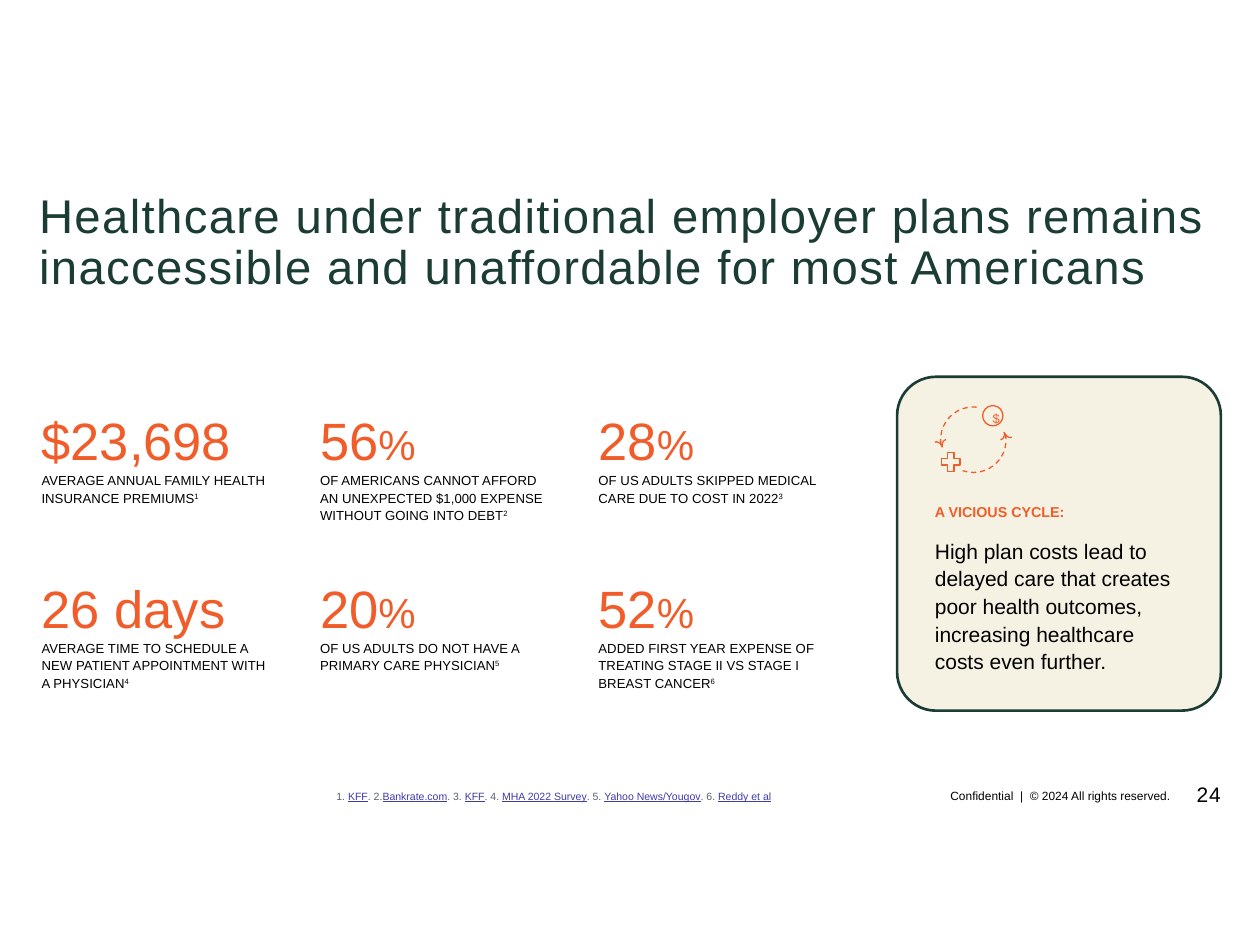
from dataclasses import dataclass, field
from typing import NamedTuple

from lxml.etree import SubElement
from pptx import Presentation
from pptx.dml.color import RGBColor
from pptx.enum.dml import MSO_LINE
from pptx.enum.shapes import MSO_SHAPE
from pptx.enum.text import MSO_ANCHOR, MSO_AUTO_SIZE, PP_ALIGN
from pptx.oxml.ns import qn
from pptx.util import Inches, Pt

GREEN = RGBColor(0x1A, 0x3C, 0x34)
ORANGE = RGBColor(0xF1, 0x5D, 0x2A)
CREAM = RGBColor(0xF5, 0xF2, 0xE3)
BLACK = RGBColor(0x00, 0x00, 0x00)
GRAY = RGBColor(0x59, 0x61, 0x6E)
LINK = RGBColor(0x40, 0x3C, 0xA8)


@dataclass
class Run:
    text: str
    size: float
    color: RGBColor
    font: dict = field(default_factory=dict)
    attributes: dict = field(default_factory=dict)


class Statistic(NamedTuple):
    number: str
    unit: str
    caption: str


class Barb(NamedTuple):
    start: tuple
    control_1: tuple
    control_2: tuple
    end: tuple


STATISTICS = [
    Statistic("$23,698", "", "AVERAGE ANNUAL FAMILY HEALTH INSURANCE PREMIUMS"),
    Statistic("56", "%", "OF AMERICANS CANNOT AFFORD AN UNEXPECTED $1,000 EXPENSE WITHOUT GOING INTO DEBT"),
    Statistic("28", "%", "OF US ADULTS SKIPPED MEDICAL CARE DUE TO COST IN 2022"),
    Statistic("26 days", "", "AVERAGE TIME TO SCHEDULE A NEW PATIENT APPOINTMENT WITH A PHYSICIAN"),
    Statistic("20", "%", "OF US ADULTS DO NOT HAVE A PRIMARY CARE PHYSICIAN"),
    Statistic("52", "%", "ADDED FIRST YEAR EXPENSE OF TREATING STAGE II VS STAGE I BREAST CANCER"),
]
# Label before each source, then the source itself
SOURCES = [
    ("1. ", "KFF"), (". 2.", "Bankrate.com"), (". 3. ", "KFF"),
    (". 4. ", "MHA 2022 Survey"), (". 5. ", "Yahoo News/Yougov"), (". 6. ", "Reddy et al"),
]
CYCLE_CENTER = (7.725, 3.49)
CYCLE_RADIUS = 0.26
BARBS = [
    Barb((8.03, 3.47), (8.01, 3.48), (7.98, 3.46), (7.97, 3.43)),
    Barb((7.94, 3.49), (7.96, 3.49), (7.98, 3.46), (7.97, 3.43)),
]


def place(shape, left: float, top: float, width: float, height: float) -> None:
    shape.left, shape.top = Inches(left), Inches(top)
    shape.width, shape.height = Inches(width), Inches(height)


def format_frame(frame, insets=(0, 0), **values) -> None:
    horizontal, vertical = map(Inches, insets)
    settings = {
        "word_wrap": True,
        "auto_size": MSO_AUTO_SIZE.SHAPE_TO_FIT_TEXT,
        "vertical_anchor": MSO_ANCHOR.TOP,
        "margin_left": horizontal, "margin_right": horizontal,
        "margin_top": vertical, "margin_bottom": vertical,
    } | values
    for name, value in settings.items():
        setattr(frame, name, value)


def write(paragraph, runs: list[Run], **values) -> None:
    for name, value in values.items():
        setattr(paragraph, name, value)
    for item in runs:
        run = paragraph.add_run()
        run.text = item.text
        settings = {"name": "Arial", "size": Pt(item.size)} | item.font
        for name, value in settings.items():
            setattr(run.font, name, value)
        run.font.color.rgb = item.color
        for name, value in item.attributes.items():
            run._r.get_or_add_rPr().set(name, value)


def add_text(slide, box: tuple, runs: list[Run], insets=(0, 0), frame_values=None, **values):
    frame = slide.shapes.add_textbox(*map(Inches, box)).text_frame
    format_frame(frame, insets, **(frame_values or {}))
    write(frame.paragraphs[0], runs, **values)
    return frame


def add_statistic(slide, left: float, top: float, number: int, statistic: Statistic) -> None:
    figure = [Run(statistic.number, 30, ORANGE)]
    if statistic.unit:
        figure.append(Run(statistic.unit, 24, ORANGE))
    frame = add_text(slide, (left, top, 1.8, 0.83), figure, line_spacing=1.1)
    write(frame.add_paragraph(), [
        Run(statistic.caption, 7.5, BLACK),
        Run(str(number), 7.5, BLACK, attributes={"baseline": "30000"}),
    ], line_spacing=1.1)


def outline(shape, color: RGBColor = ORANGE, width: float = 0.75, fill=None) -> None:
    shape.shadow.inherit = False
    if fill is None:
        shape.fill.background()
    else:
        shape.fill.solid()
        shape.fill.fore_color.rgb = fill
    shape.line.color.rgb = color
    shape.line.width = Pt(width)


def add_preset(slide, kind, box: tuple, adjustments=()):
    shape = slide.shapes.add_shape(kind, *map(Inches, box))
    for index, value in enumerate(adjustments):
        shape.adjustments[index] = value
    outline(shape)
    return shape


def add_barb(slide, barb: Barb) -> None:
    points = []
    for step in range(9):
        t = step / 8
        weights = ((1 - t) ** 3, 3 * t * (1 - t) ** 2, 3 * t ** 2 * (1 - t), t ** 3)
        points.append(tuple(
            Inches(sum(weight * point[axis] for weight, point in zip(weights, barb)))
            for axis in (0, 1)
        ))
    builder = slide.shapes.build_freeform(*points[0])
    builder.add_line_segments(points[1:], close=False)
    outline(builder.convert_to_shape())


def add_cycle_icon(slide) -> None:
    center_x, center_y = CYCLE_CENTER
    box = (center_x - CYCLE_RADIUS, center_y - CYCLE_RADIUS, 2 * CYCLE_RADIUS, 2 * CYCLE_RADIUS)
    # Angles are stored in 60000ths of a degree, adjustments in 100000ths
    for start, end in ((350, 109), (172, 278)):
        arc = add_preset(slide, MSO_SHAPE.ARC, box, (start * 0.6, end * 0.6))
        arc.line.dash_style = MSO_LINE.DASH
    for barb in BARBS:
        add_barb(slide, barb)
        add_barb(slide, Barb(*((2 * center_x - x, 2 * center_y - y) for x, y in barb)))
    add_preset(slide, MSO_SHAPE.CROSS, (7.47, 3.59, 0.15, 0.15), (0.33,))
    add_preset(slide, MSO_SHAPE.OVAL, (7.8, 3.22, 0.16, 0.16))
    add_text(slide, (7.78, 3.21, 0.26, 0.22), [Run("$", 7.3, ORANGE)], (0.1, 0.05), {"word_wrap": False})


def main() -> None:
    presentation = Presentation()
    presentation.slide_width, presentation.slide_height = Inches(10), Inches(7.5)
    slide = presentation.slides.add_slide(presentation.slide_layouts[1])

    # Title
    title = slide.shapes.title
    place(title, 0.31, 1.53, 9.38, 0.82)
    format_frame(title.text_frame)
    write(title.text_frame.paragraphs[0], [Run(
        "Healthcare under traditional employer plans remains inaccessible and unaffordable for most Americans",
        27, GREEN, attributes={"spc": "80"},
    )], alignment=PP_ALIGN.LEFT, line_spacing=0.9)

    # Sources
    sources = slide.placeholders[1]
    place(sources, 2.67, 6.27, 4.65, 0.1)
    format_frame(sources.text_frame, vertical_anchor=MSO_ANCHOR.BOTTOM)
    paragraph = sources.text_frame.paragraphs[0]
    properties = paragraph._p.get_or_add_pPr()
    properties.set("marL", "0")
    properties.set("indent", "0")
    SubElement(properties, qn("a:buNone"))
    runs = []
    for label, source in SOURCES:
        runs += [Run(label, 6, GRAY), Run(source, 6, LINK, {"underline": True})]
    write(paragraph, runs, space_before=Pt(0))

    # Statistics grid
    for index, statistic in enumerate(STATISTICS):
        row, column = divmod(index, 3)
        add_statistic(slide, 0.33 + 2.21 * column, 3.19 + 1.33 * row, index + 1, statistic)

    # Vicious cycle card
    card = add_preset(slide, MSO_SHAPE.ROUNDED_RECTANGLE, (7.12, 2.99, 2.57, 2.65), (0.12,))
    outline(card, GREEN, 1.5, CREAM)
    frame = add_text(slide, (7.35, 3.95, 2.15, 1.45), [Run("A VICIOUS CYCLE:", 8.2, ORANGE, {"bold": True})],
                     (0.07, 0.04), space_after=Pt(9))
    write(frame.add_paragraph(), [Run(
        "High plan costs lead to delayed care that creates poor health outcomes, "
        "increasing healthcare costs even further.", 12, BLACK,
    )], line_spacing=1.1)
    add_cycle_icon(slide)

    # Footer and page number
    bottom = {"vertical_anchor": MSO_ANCHOR.BOTTOM}
    add_text(slide, (7.49, 6.26, 1.8, 0.11), [Run("Confidential  |  © 2024 All rights reserved.", 6.8, BLACK)],
             frame_values=bottom, alignment=PP_ALIGN.RIGHT)
    add_text(slide, (9.29, 5.88, 0.4, 0.52), [Run("24", 12, BLACK, attributes={"spc": "50"})],
             frame_values=bottom | {"auto_size": MSO_AUTO_SIZE.NONE}, alignment=PP_ALIGN.RIGHT)

    presentation.save("out.pptx")


if __name__ == "__main__":
    main()
